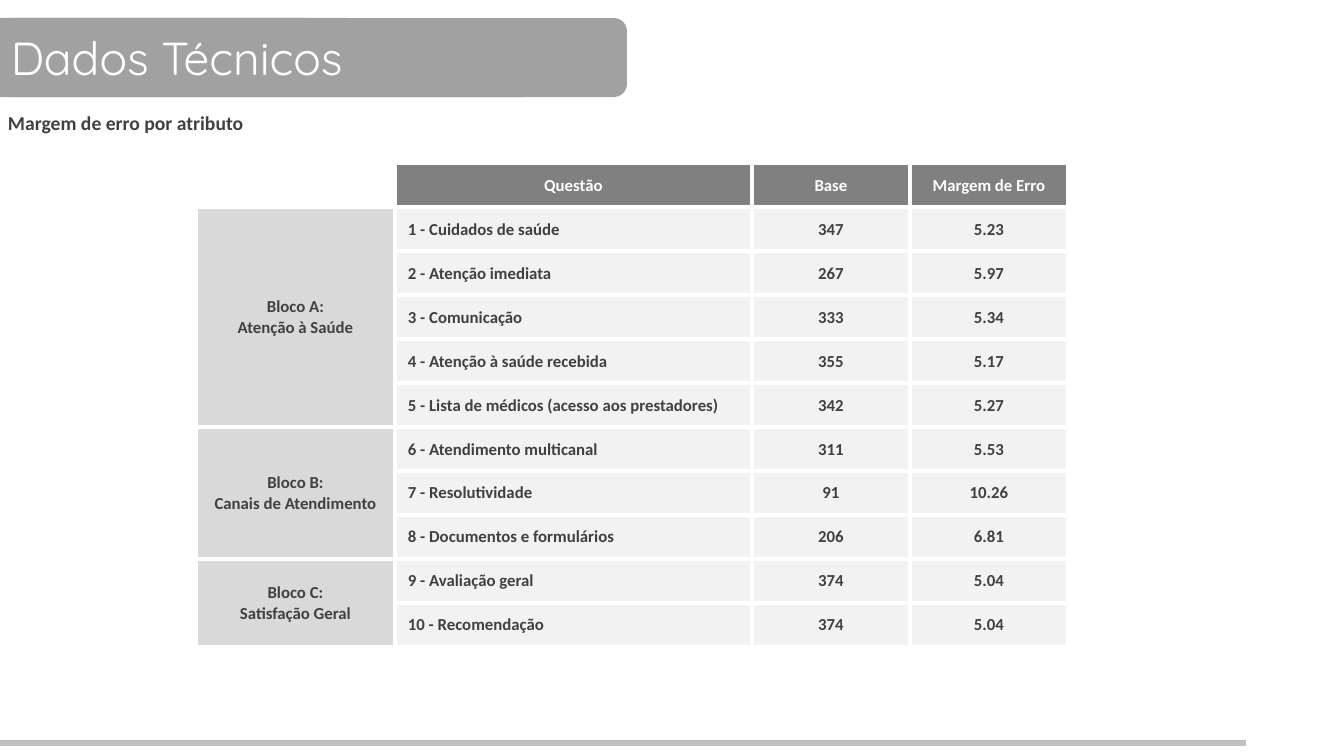
from dataclasses import dataclass

from lxml import etree
from pptx import Presentation
from pptx.dml.color import RGBColor
from pptx.enum.shapes import MSO_CONNECTOR, MSO_SHAPE
from pptx.enum.text import MSO_ANCHOR, PP_ALIGN
from pptx.oxml.ns import qn
from pptx.shapes.autoshape import Shape
from pptx.slide import Slide
from pptx.table import Table, _Cell
from pptx.text.text import TextFrame
from pptx.util import Emu, Pt

ROUNDED = MSO_SHAPE.ROUNDED_RECTANGLE
STRAIGHT = MSO_CONNECTOR.STRAIGHT
MIDDLE = MSO_ANCHOR.MIDDLE
LEFT = PP_ALIGN.LEFT
CENTER = PP_ALIGN.CENTER

WHITE = RGBColor(0xFF, 0xFF, 0xFF)
BAND_GRAY = RGBColor(0xA1, 0xA1, 0xA1)
RULE_GRAY = RGBColor(0xBF, 0xBF, 0xBF)
HEADER_GRAY = RGBColor(0x80, 0x80, 0x80)
BLOCK_GRAY = RGBColor(0xD9, 0xD9, 0xD9)
ROW_GRAY = RGBColor(0xF2, 0xF2, 0xF2)
INK = RGBColor(0x40, 0x40, 0x40)

PX_PER_INCH = 100.8
ROW_HEIGHT = 44
COLUMN_WIDTHS = (199, 357, 158, 158)
HEADERS = ("Questão", "Base", "Margem de Erro")
QUESTION_INDENT = 12
BORDER_WIDTH = Pt(3)


@dataclass(frozen=True)
class Box:
    left: int
    top: int
    width: int
    height: int


@dataclass(frozen=True)
class TextStyle:
    font: str
    size: float
    color: RGBColor
    bold: bool = False
    align: PP_ALIGN = LEFT
    indent: int = 0


@dataclass(frozen=True)
class Question:
    label: str
    base: str
    error: str


@dataclass(frozen=True)
class Block:
    title: str
    questions: tuple[Question, ...]


TITLE_STYLE = TextStyle("Quicksand", 33, WHITE)
SUBTITLE_STYLE = TextStyle("Calibri", 14, INK, True)
HEADER_STYLE = TextStyle("Calibri", 12, WHITE, True, CENTER)
VALUE_STYLE = TextStyle("Calibri", 12, INK, True, CENTER)
QUESTION_STYLE = TextStyle("Calibri", 12, INK, True, LEFT, QUESTION_INDENT)

BLOCKS = (
    Block("Bloco A:\nAtenção à Saúde", (
        Question("1 - Cuidados de saúde", "347", "5.23"),
        Question("2 - Atenção imediata", "267", "5.97"),
        Question("3 - Comunicação", "333", "5.34"),
        Question("4 - Atenção à saúde recebida", "355", "5.17"),
        Question("5 - Lista de médicos (acesso aos prestadores)", "342", "5.27"),
    )),
    Block("Bloco B:\nCanais de Atendimento", (
        Question("6 - Atendimento multicanal", "311", "5.53"),
        Question("7 - Resolutividade", "91", "10.26"),
        Question("8 - Documentos e formulários", "206", "6.81"),
    )),
    Block("Bloco C:\nSatisfação Geral", (
        Question("9 - Avaliação geral", "374", "5.04"),
        Question("10 - Recomendação", "374", "5.04"),
    )),
)


def px(length: int) -> Emu:
    return Emu(round(length * 914400 / PX_PER_INCH))


def place(box: Box) -> tuple[Emu, ...]:
    return tuple(px(side) for side in (box.left, box.top, box.width, box.height))


def write(frame: TextFrame, text: str, style: TextStyle) -> None:
    frame.text = text
    font_format = {"name": style.font, "size": Pt(style.size), "bold": style.bold}
    for paragraph in frame.paragraphs:
        paragraph.alignment = style.align
        if style.indent:
            paragraph._p.get_or_add_pPr().set("marL", str(px(style.indent)))
        for run in paragraph.runs:
            for key, value in font_format.items():
                setattr(run.font, key, value)
            run.font.color.rgb = style.color


def add_band(slide: Slide, box: Box) -> Shape:
    band = slide.shapes.add_shape(ROUNDED, *place(box))
    band.shadow.inherit = False
    band.fill.solid()
    band.fill.fore_color.rgb = BAND_GRAY
    band.line.fill.background()
    return band


def add_footer_rule(slide: Slide, top: int, width: int) -> None:
    rule = slide.shapes.add_connector(STRAIGHT, px(0), px(top), px(width), px(top))
    rule.line.color.rgb = RULE_GRAY
    rule.line.width = Pt(4.5)
    etree.SubElement(rule._element.spPr, qn("a:effectLst"))


def add_subtitle(slide: Slide, box: Box, text: str) -> None:
    subtitle = slide.shapes.add_textbox(*place(box))
    frame_format = {"word_wrap": True, "margin_left": px(11), "margin_right": px(11),
                    "margin_top": px(6), "margin_bottom": px(6)}
    for key, value in frame_format.items():
        setattr(subtitle.text_frame, key, value)
    write(subtitle.text_frame, text, SUBTITLE_STYLE)


def format_cell(cell: _Cell, fill: RGBColor) -> None:
    cell_format = {"vertical_anchor": MIDDLE, "margin_left": px(1), "margin_right": px(1),
                   "margin_top": px(1), "margin_bottom": px(0)}
    for key, value in cell_format.items():
        setattr(cell, key, value)
    properties = cell._tc.get_or_add_tcPr()
    for side in ("a:lnL", "a:lnR", "a:lnT", "a:lnB"):
        border = etree.SubElement(properties, qn(side), w=str(BORDER_WIDTH))
        border_fill = etree.SubElement(border, qn("a:solidFill"))
        etree.SubElement(border_fill, qn("a:srgbClr"), val=str(WHITE))
    cell.fill.solid()
    cell.fill.fore_color.rgb = fill


def fill_block(table: Table, block: Block, first_row: int) -> None:
    for row, question in enumerate(block.questions, first_row):
        format_cell(table.cell(row, 0), BLOCK_GRAY)
        entries = ((question.label, QUESTION_STYLE), (question.base, VALUE_STYLE),
                   (question.error, VALUE_STYLE))
        for column, (text, style) in enumerate(entries, 1):
            cell = table.cell(row, column)
            format_cell(cell, ROW_GRAY)
            write(cell.text_frame, text, style)
    block_cell = table.cell(first_row, 0)
    block_cell.merge(table.cell(first_row + len(block.questions) - 1, 0))
    write(block_cell.text_frame, block.title, VALUE_STYLE)


def add_error_table(slide: Slide, left: int, top: int) -> None:
    row_count = 1 + sum(len(block.questions) for block in BLOCKS)
    box = Box(left, top, sum(COLUMN_WIDTHS), row_count * ROW_HEIGHT)
    table = slide.shapes.add_table(row_count, len(COLUMN_WIDTHS), *place(box)).table
    table.first_row = table.horz_banding = False
    for column, width in zip(table.columns, COLUMN_WIDTHS):
        column.width = px(width)
    for row in table.rows:
        row.height = px(ROW_HEIGHT)
    table.cell(0, 0).fill.background()
    for column, header in enumerate(HEADERS, 1):
        cell = table.cell(0, column)
        format_cell(cell, HEADER_GRAY)
        write(cell.text_frame, header, HEADER_STYLE)
    first_row = 1
    for block in BLOCKS:
        fill_block(table, block, first_row)
        first_row += len(block.questions)


def main() -> None:
    deck = Presentation()
    deck.slide_width, deck.slide_height = px(1344), px(756)
    slide = deck.slides.add_slide(deck.slide_layouts[6])
    add_band(slide, Box(-27, 18, 654, 79))
    add_footer_rule(slide, 743, 1246)
    title = add_band(slide, Box(-3, 18, 540, 79))
    title.text_frame.vertical_anchor = MIDDLE
    write(title.text_frame, "Dados Técnicos", TITLE_STYLE)
    add_error_table(slide, 196, 163)
    add_subtitle(slide, Box(-3, 105, 301, 35), "Margem de erro por atributo")
    deck.save("out.pptx")


if __name__ == "__main__":
    main()
